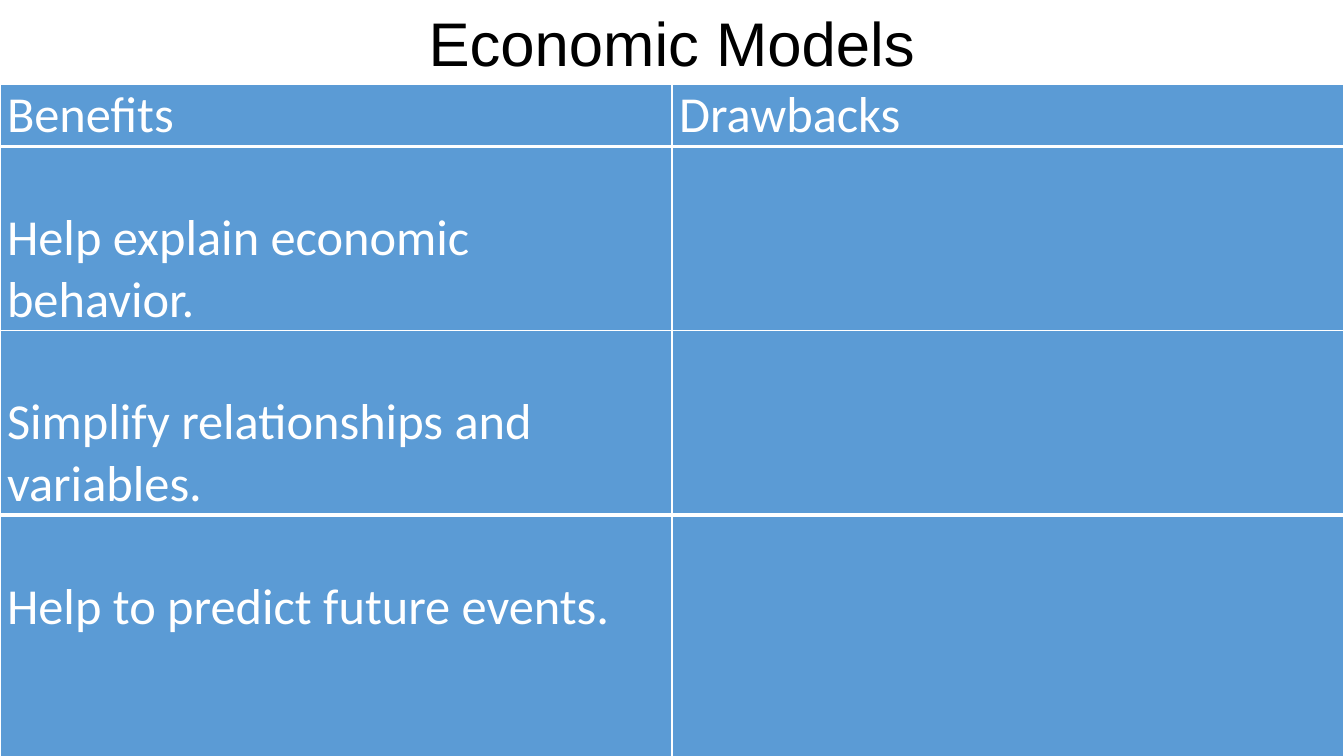
"""Build the Economic Models slide: a title over a benefits and drawbacks table."""
from lxml.etree import SubElement
from pptx import Presentation
from pptx.dml.color import RGBColor as RGB
from pptx.enum.text import MSO_ANCHOR as Anchor, PP_ALIGN as Align
from pptx.oxml.ns import qn
from pptx.util import Inches, Pt

TITLE = "Economic Models"
ROWS = [
    ("Benefits", "Drawbacks"),
    ("Help explain economic behavior.", ""),
    ("Simplify relationships and variables.", ""),
    ("Help to predict future events.", ""),
]
ROW_LINES = [1, 3, 3, 4]
THICK_EDGES = {(0, "B"), (1, "T"), (2, "B"), (3, "T")}
COLORS = {"cell": "5B9BD5", "white": "FFFFFF", "title": "000000"}
WIDTH, HEIGHT, TITLE_HEIGHT = Inches(13.33), Inches(7.5), Inches(0.84)
TITLE_WIDTH = Inches(5.07)


def write(tf, text, size, font, color, align=Align.LEFT):
    p = tf.paragraphs[0]
    p.alignment = align
    r = p.add_run()
    r.text = text
    r.font.size, r.font.name = Pt(size), font
    r.font.color.rgb = RGB.from_string(COLORS[color])


def add_borders(cell, row):
    tc_pr = cell._tc.get_or_add_tcPr()
    for side in "LRTB":
        width = Pt(3 if (row, side) in THICK_EDGES else 1)
        ln = SubElement(tc_pr, qn(f"a:ln{side}"), w=str(width))
        fill = SubElement(ln, qn("a:solidFill"))
        SubElement(fill, qn("a:srgbClr"), val=COLORS["white"])


def add_title(slide):
    sp = slide.shapes.title
    sp.left, sp.top = (WIDTH - TITLE_WIDTH) // 2, 0
    sp.width, sp.height = TITLE_WIDTH, TITLE_HEIGHT
    tf = sp.text_frame
    tf.word_wrap, tf.vertical_anchor = False, Anchor.MIDDLE
    write(tf, TITLE, 44, "Arial", "title", Align.CENTER)


def add_benefits_table(slide):
    body = HEIGHT - TITLE_HEIGHT
    line = body // sum(ROW_LINES)
    table = slide.shapes.add_table(
        len(ROWS), len(ROWS[0]), 0, TITLE_HEIGHT, WIDTH, body).table
    for column in table.columns:
        column.width = WIDTH // len(ROWS[0])
    for i, (texts, lines) in enumerate(zip(ROWS, ROW_LINES)):
        table.rows[i].height = line * lines
        for j, text in enumerate(texts):
            cell = table.cell(i, j)
            add_borders(cell, i)
            cell.fill.solid()
            cell.fill.fore_color.rgb = RGB.from_string(COLORS["cell"])
            cell.margin_left, cell.margin_right = Inches(0.07), Inches(0.3)
            cell.margin_top, cell.margin_bottom = line if i else 0, 0
            if text:
                write(cell.text_frame, text, 36, "Calibri", "white")


def main():
    prs = Presentation()
    prs.slide_width, prs.slide_height = WIDTH, HEIGHT
    slide = prs.slides.add_slide(prs.slide_layouts[5])
    add_benefits_table(slide)
    add_title(slide)
    prs.save("out.pptx")


if __name__ == "__main__":
    main()
